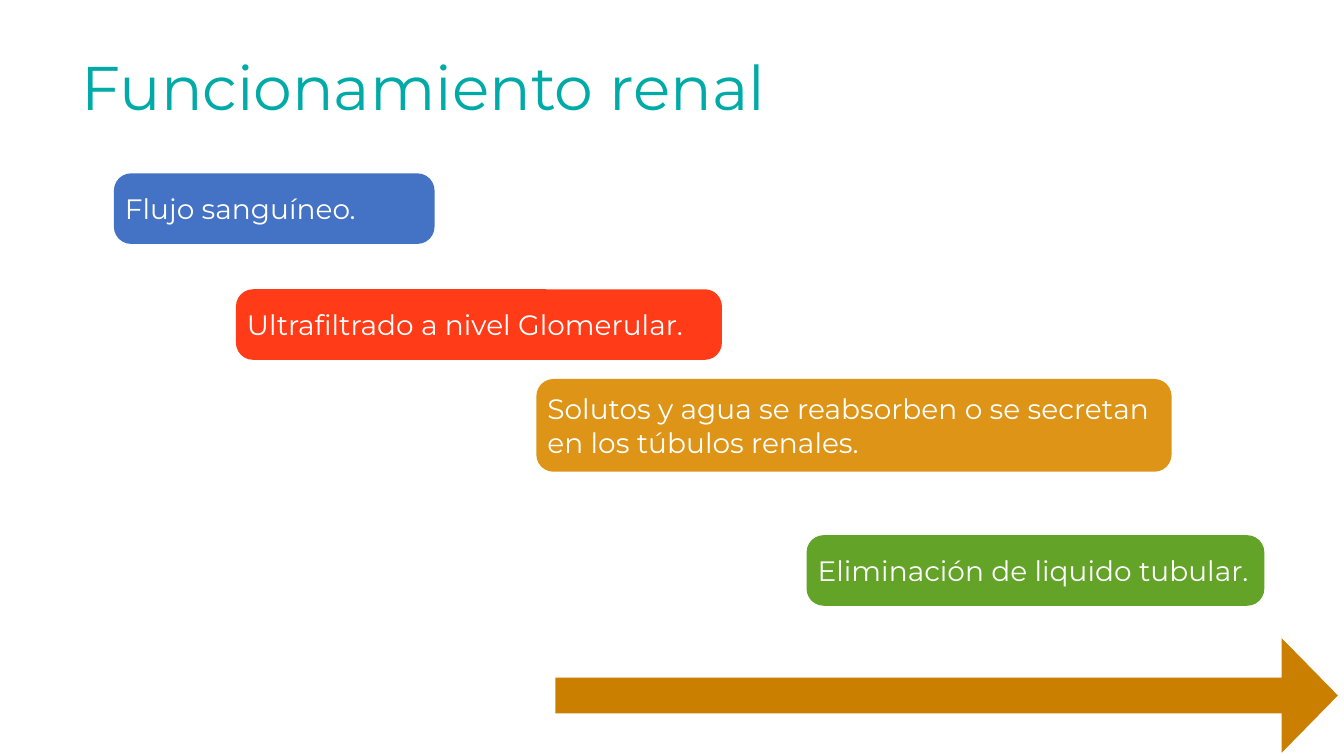
import pptx
import pptx.util
import pptx.dml.color
import pptx.enum.shapes
import pptx.enum.text
from dataclasses import dataclass
from pptx.util import Inches


@dataclass(frozen=True)
class Theme:
    font: str = "Montserrat"
    title_size: int = 44
    step_size: int = 20
    teal: str = "00AAA7"
    white: str = "FFFFFF"
    blue: str = "4472C4"
    red: str = "FF3B18"
    amber: str = "DD9417"
    green: str = "63A328"
    arrow: str = "CB7F00"


theme = Theme()
PP_ALIGN = pptx.enum.text.PP_ALIGN
MSO_SHAPE = pptx.enum.shapes.MSO_SHAPE


def write_text(shape, text, *, size, color, align=PP_ALIGN.LEFT, line_spacing=1.0):
    frame = shape.text_frame
    frame.word_wrap = True
    frame.auto_size = pptx.enum.text.MSO_AUTO_SIZE.NONE
    frame.vertical_anchor = pptx.enum.text.MSO_ANCHOR.MIDDLE
    paragraph = frame.paragraphs[0]
    paragraph.alignment = align
    paragraph.line_spacing = line_spacing
    run = paragraph.add_run()
    run.text = text
    run.font.name = theme.font
    run.font.size = pptx.util.Pt(size)
    run.font.color.rgb = pptx.dml.color.RGBColor.from_string(color)


def add_filled_shape(kind, left, top, width, height, color):
    shape = slide.shapes.add_shape(
        kind, Inches(left), Inches(top), Inches(width), Inches(height))
    shape.shadow.inherit = False
    shape.fill.solid()
    shape.fill.fore_color.rgb = pptx.dml.color.RGBColor.from_string(color)
    shape.line.fill.background()
    return shape


presentation = pptx.Presentation()
presentation.slide_width = Inches(13.33)
presentation.slide_height = Inches(7.5)
slide = presentation.slides.add_slide(presentation.slide_layouts[5])

# Title
title = slide.shapes.title
title.left, title.top = Inches(0.55), Inches(0.17)
title.width, title.height = Inches(7.31), Inches(1.45)
write_text(title, "Funcionamiento renal", size=theme.title_size,
           color=theme.teal, align=PP_ALIGN.CENTER, line_spacing=0.9)

# Steps of renal function, all with the same corner radius
corner_radius = 0.17
inset = Inches(0.06)
steps = [
    ("Flujo sanguíneo.", 1.13, 1.72, 3.18, 0.7, theme.blue),
    ("Ultrafiltrado a nivel Glomerular.", 2.34, 2.87, 4.82, 0.7, theme.red),
    ("Solutos y agua se reabsorben o se secretan en los túbulos renales.",
     5.32, 3.76, 6.3, 0.92, theme.amber),
    ("Eliminación de liquido tubular.", 8, 5.31, 4.54, 0.7, theme.green),
]
for text, left, top, width, height, color in steps:
    step = add_filled_shape(
        MSO_SHAPE.ROUNDED_RECTANGLE, left, top, width, height, color)
    step.adjustments[0] = corner_radius / height
    frame = step.text_frame
    frame.margin_left = frame.margin_right = inset
    frame.margin_top = frame.margin_bottom = inset
    write_text(step, text, size=theme.step_size, color=theme.white)

# Direction arrow
arrow = add_filled_shape(
    MSO_SHAPE.RIGHT_ARROW, 5.51, 6.33, 7.76, 1.14, theme.arrow)
arrow.adjustments[0] = 0.31
arrow.adjustments[1] = 0.49

presentation.save("out.pptx")
